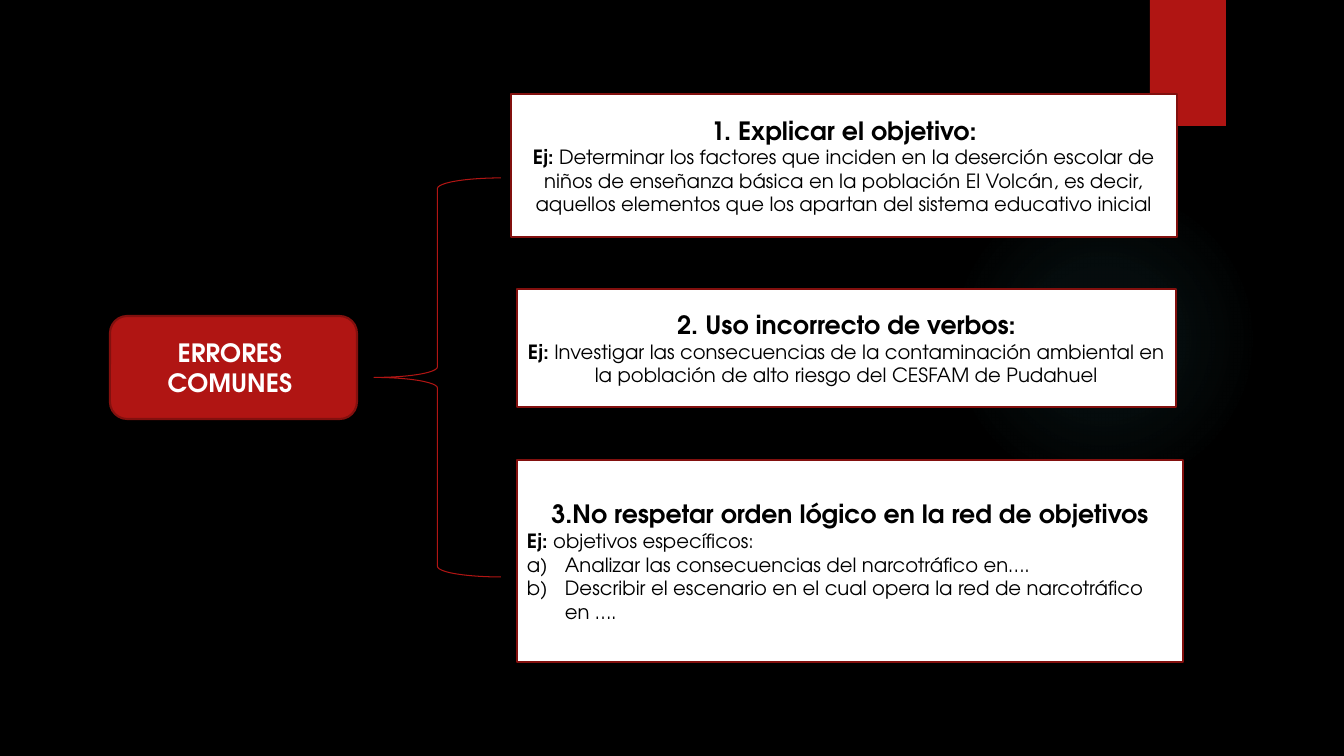
import pptx
import pptx.util
import pptx.dml.color
import pptx.enum.shapes
import pptx.enum.text
import pptx.oxml
import pptx.oxml.ns

SHAPES = pptx.enum.shapes.MSO_SHAPE
CENTER = pptx.enum.text.PP_ALIGN.CENTER
LEFT = pptx.enum.text.PP_ALIGN.LEFT
FONT = "TeX Gyre Adventor"
RED, DARK_RED, WHITE, BLACK, TEAL = "B01513", "82100E", "FFFFFF", "000000", "50B9C1"
HEADING = {"size": pptx.util.Pt(18), "bold": True}
LABEL = {"size": pptx.util.Pt(14), "bold": True}
BODY = {"size": pptx.util.Pt(14), "bold": False}


def px(length):
    return round(length * 12192000 / 1344)


def color(value):
    return pptx.dml.color.RGBColor.from_string(value)


def add_shape(slide, kind, box, fill=None, line=None, width=1.5):
    shape = slide.shapes.add_shape(kind, *map(px, box))
    shape.shadow.inherit = False
    if fill:
        shape.fill.solid()
        shape.fill.fore_color.rgb = color(fill)
    else:
        shape.fill.background()
    if line:
        shape.line.color.rgb = color(line)
        shape.line.width = pptx.util.Pt(width)
    else:
        shape.line.fill.background()
    return shape


def number_with_letters(paragraph):
    properties = paragraph._p.get_or_add_pPr()
    properties.set("marL", str(px(38)))
    properties.set("indent", str(-px(38)))
    numbering = pptx.oxml.parse_xml(
        f'<a:buAutoNum {pptx.oxml.ns.nsdecls("a")} type="alphaLcParenR"/>')
    properties.append(numbering)


def write(shape, paragraphs, text_color):
    frame = shape.text_frame
    frame.word_wrap = True
    frame.vertical_anchor = pptx.enum.text.MSO_ANCHOR.MIDDLE
    for index, (alignment, numbered, runs) in enumerate(paragraphs):
        paragraph = frame.add_paragraph() if index else frame.paragraphs[0]
        paragraph.alignment = alignment
        if numbered:
            number_with_letters(paragraph)
        for text, style in runs:
            run = paragraph.add_run()
            run.text = text
            run.font.color.rgb = color(text_color)
            for name, value in {"name": FONT, **style}.items():
                setattr(run.font, name, value)


def draw_glow(slide, box):
    glow = add_shape(slide, SHAPES.OVAL, box)
    stops = "".join(
        f'<a:gs pos="{position * 1000}"><a:srgbClr val="{TEAL}">'
        f'<a:alpha val="{alpha * 1000}"/></a:srgbClr></a:gs>'
        for position, alpha in ((0, 7), (36, 6), (69, 0)))
    gradient = pptx.oxml.parse_xml(
        f'<a:gradFill {pptx.oxml.ns.nsdecls("a")}><a:gsLst>{stops}</a:gsLst>'
        '<a:path path="circle"><a:fillToRect l="50000" t="50000" r="50000" b="50000"/>'
        '</a:path></a:gradFill>')
    properties = glow._element.spPr
    properties.replace(properties.find(pptx.oxml.ns.qn("a:noFill")), gradient)


def draw_backdrop(slide):
    slide.background.fill.solid()
    slide.background.fill.fore_color.rgb = color(BLACK)
    draw_glow(slide, (949, 184, 310, 310))
    add_shape(slide, SHAPES.RECTANGLE, (1150, 0, 76, 126), RED)


def draw_topic(slide, box):
    left, top, width, height = box
    topic = add_shape(slide, SHAPES.ROUNDED_RECTANGLE, box, RED, DARK_RED)
    lines = [(CENTER, False, [(word, HEADING)]) for word in ("ERRORES ", "COMUNES ")]
    write(topic, lines, WHITE)
    brace = (left + width + 17, top - 138, 127, 399)
    add_shape(slide, SHAPES.LEFT_BRACE, brace, None, RED, 0.75)


def draw_error(slide, box, heading, example, alignment=CENTER, items=()):
    card = add_shape(slide, SHAPES.RECTANGLE, box, WHITE, DARK_RED)
    paragraphs = [
        (CENTER, False, [(heading, HEADING)]),
        (alignment, False, [("Ej: ", LABEL), (example, BODY)]),
    ]
    paragraphs += [(alignment, True, [(item, BODY)]) for item in items]
    write(card, paragraphs, BLACK)


def main():
    presentation = pptx.Presentation()
    presentation.slide_width, presentation.slide_height = px(1344), px(756)
    slide = presentation.slides.add_slide(presentation.slide_layouts[6])
    draw_backdrop(slide)
    draw_topic(slide, (110, 316, 247, 103))
    draw_error(
        slide, (511, 94, 666, 143), "1. Explicar el objetivo:",
        "Determinar los factores que inciden en la deserción escolar de niños de "
        "enseñanza básica en la población El Volcán, es decir, aquellos elementos "
        "que los apartan del sistema educativo inicial")
    draw_error(
        slide, (517, 289, 659, 118), "2. Uso incorrecto de verbos:",
        "Investigar las consecuencias de la contaminación ambiental en la población "
        "de alto riesgo del CESFAM de Pudahuel")
    draw_error(
        slide, (517, 460, 666, 202), "3.No respetar orden lógico en la red de objetivos",
        "objetivos específicos:", LEFT,
        ("Analizar las consecuencias del narcotráfico en….",
         "Describir el escenario en el cual opera la red de narcotráfico en …."))
    presentation.save("out.pptx")


if __name__ == "__main__":
    main()
